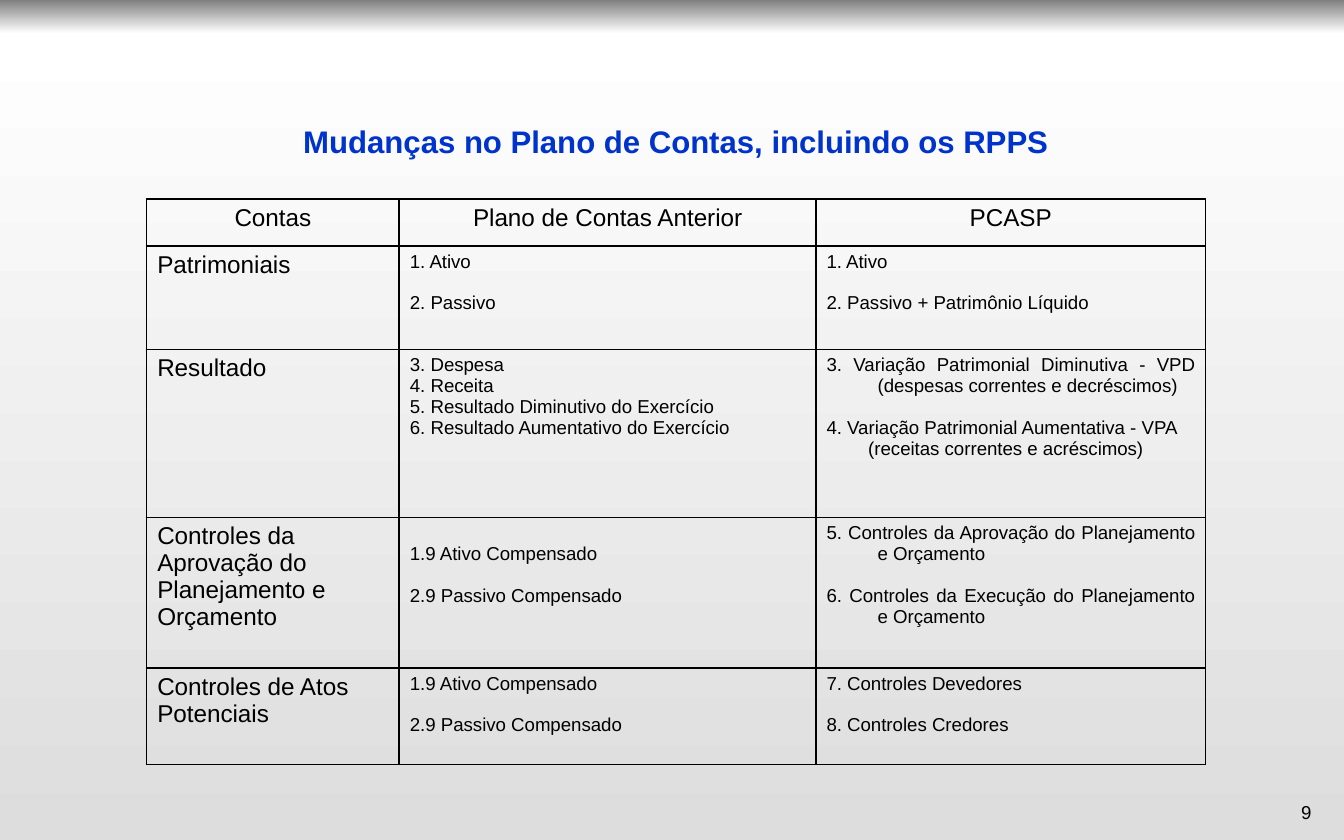
from copy import deepcopy
from dataclasses import dataclass

from lxml import etree
from pptx import Presentation
from pptx.dml.color import RGBColor
from pptx.enum.text import MSO_ANCHOR, PP_ALIGN
from pptx.oxml.ns import qn
from pptx.util import Inches, Pt

LEFT, CENTER, JUSTIFY = PP_ALIGN.LEFT, PP_ALIGN.CENTER, PP_ALIGN.JUSTIFY
MIDDLE = MSO_ANCHOR.MIDDLE
TITLE_ONLY = 5


@dataclass(frozen=True)
class Theme:
    font: str = "Arial"
    text: str = "000000"
    title: str = "0033CC"
    border: str = "000000"
    background: tuple = ((0, "808080"), (0.04, "FFFFFF"), (1, "DDDDDD"))
    title_size: float = 16.7
    label_size: float = 13
    body_size: float = 10
    group_gap: float = 11.2
    border_width: float = 1


THEME = Theme()
SLIDE_W, SLIDE_H = 10, 6.25
COLUMNS = (1.88, 3.1, 2.9)
ROWS = (0.35, 0.77, 1.25, 1.12, 0.72)
HANGING, SUBLINE = 0.38, 0.31
MARGIN_X, MARGIN_Y = 0.08, 0.04

HEADERS = ("Contas", "Plano de Contas Anterior", "PCASP")
COMPENSATED = [["1.9 Ativo Compensado"], ["2.9 Passivo Compensado"]]
# Each row: label lines, then two cells made of groups of lines;
# an empty first group lowers the text by one line.
ACCOUNTS = (
    (["Patrimoniais"],
     [["1. Ativo"], ["2. Passivo"]],
     [["1. Ativo"], ["2. Passivo + Patrimônio Líquido"]]),
    (["Resultado"],
     [["3. Despesa", "4. Receita", "5. Resultado Diminutivo do Exercício",
       "6. Resultado Aumentativo do Exercício"]],
     [["3. Variação Patrimonial Diminutiva - VPD (despesas correntes e decréscimos)"],
      ["4. Variação Patrimonial Aumentativa - VPA",
       "(receitas correntes e acréscimos)"]]),
    (["Controles da", "Aprovação do", "Planejamento e", "Orçamento"],
     [[]] + COMPENSATED,
     [["5. Controles da Aprovação do Planejamento e Orçamento"],
      ["6. Controles da Execução do Planejamento e Orçamento"]]),
    (["Controles de Atos", "Potenciais"],
     COMPENSATED,
     [["7. Controles Devedores"], ["8. Controles Credores"]]),
)


def place(shape, left, top, width, height):
    shape.left, shape.top = Inches(left), Inches(top)
    shape.width, shape.height = Inches(width), Inches(height)


def add_run(p, text, size, color=THEME.text, bold=False):
    r = p.add_run()
    r.text = text
    r.font.name, r.font.size, r.font.bold = THEME.font, Pt(size), bold
    r.font.color.rgb = RGBColor.from_string(color)


def set_background(s):
    fill = s.background.fill
    fill.gradient()
    fill.gradient_angle = 270
    stops = s.background._cSld.xpath(".//a:gsLst")[0]
    stops.append(deepcopy(stops[-1]))
    for stop, (position, color) in zip(fill.gradient_stops, THEME.background):
        stop.position = position
        stop.color.rgb = RGBColor.from_string(color)


def set_title(s, text):
    title = s.shapes.title
    place(title, 1.52, 0.86, 7.02, 0.38)
    tf = title.text_frame
    tf.vertical_anchor = MIDDLE
    p = tf.paragraphs[0]
    p.alignment = CENTER
    add_run(p, text, THEME.title_size, THEME.title, True)


def add_page_number(s, number):
    box = s.shapes.add_textbox(0, 0, 0, 0)
    place(box, 9.61, 5.96, 0.22, 0.17)
    tf = box.text_frame
    tf.margin_left = tf.margin_right = tf.margin_top = tf.margin_bottom = 0
    p = tf.paragraphs[0]
    p.alignment = CENTER
    add_run(p, number, THEME.body_size)


def set_borders(cell):
    tc_pr = cell._tc.get_or_add_tcPr()
    for side in ("a:lnL", "a:lnR", "a:lnT", "a:lnB"):
        line = etree.SubElement(tc_pr, qn(side), w=str(Pt(THEME.border_width)))
        solid = etree.SubElement(line, qn("a:solidFill"))
        etree.SubElement(solid, qn("a:srgbClr"), val=THEME.border)


def fill_cell(cell, groups, size, align):
    set_borders(cell)
    cell.fill.background()
    cell.margin_left = cell.margin_right = Inches(MARGIN_X)
    lowered = Pt(THEME.group_gap) if not groups[0] else 0
    cell.margin_top = Inches(MARGIN_Y) + lowered
    cell.margin_bottom = Inches(MARGIN_Y)
    tf = cell.text_frame
    filled = [group for group in groups if group]
    for g, group in enumerate(filled):
        for i, line in enumerate(group):
            p = tf.paragraphs[0] if g == i == 0 else tf.add_paragraph()
            p.alignment = align
            # Wrapped lines hang; bracketed remarks sit fully indented
            remark = line.startswith("(")
            p_pr = p._p.get_or_add_pPr()
            p_pr.set("marL", str(Inches(SUBLINE if remark else HANGING)))
            p_pr.set("indent", str(0 if remark else -Inches(HANGING)))
            if g and i == 0:
                p.space_before = Pt(THEME.group_gap)
            add_run(p, line, size)


def add_accounts_table(s):
    frame = s.shapes.add_table(len(ROWS), len(COLUMNS), Inches(1.09), Inches(1.48),
                               Inches(sum(COLUMNS)), Inches(sum(ROWS)))
    table = frame.table
    table.first_row = table.horz_banding = False
    for column, width in zip(table.columns, COLUMNS):
        column.width = Inches(width)
    for row, height in zip(table.rows, ROWS):
        row.height = Inches(height)
    # Header row
    for c, header in enumerate(HEADERS):
        fill_cell(table.cell(0, c), [[header]], THEME.label_size, CENTER)
    # Account rows
    for r, (label, *details) in enumerate(ACCOUNTS, 1):
        fill_cell(table.cell(r, 0), [label], THEME.label_size, LEFT)
        for c, groups in enumerate(details, 1):
            fill_cell(table.cell(r, c), groups, THEME.body_size, JUSTIFY)


def main():
    prs = Presentation()
    prs.slide_width, prs.slide_height = Inches(SLIDE_W), Inches(SLIDE_H)
    s = prs.slides.add_slide(prs.slide_layouts[TITLE_ONLY])
    set_background(s)
    set_title(s, "Mudanças no Plano de Contas, incluindo os RPPS")
    add_accounts_table(s)
    add_page_number(s, "9")
    prs.save("out.pptx")


if __name__ == "__main__":
    main()
